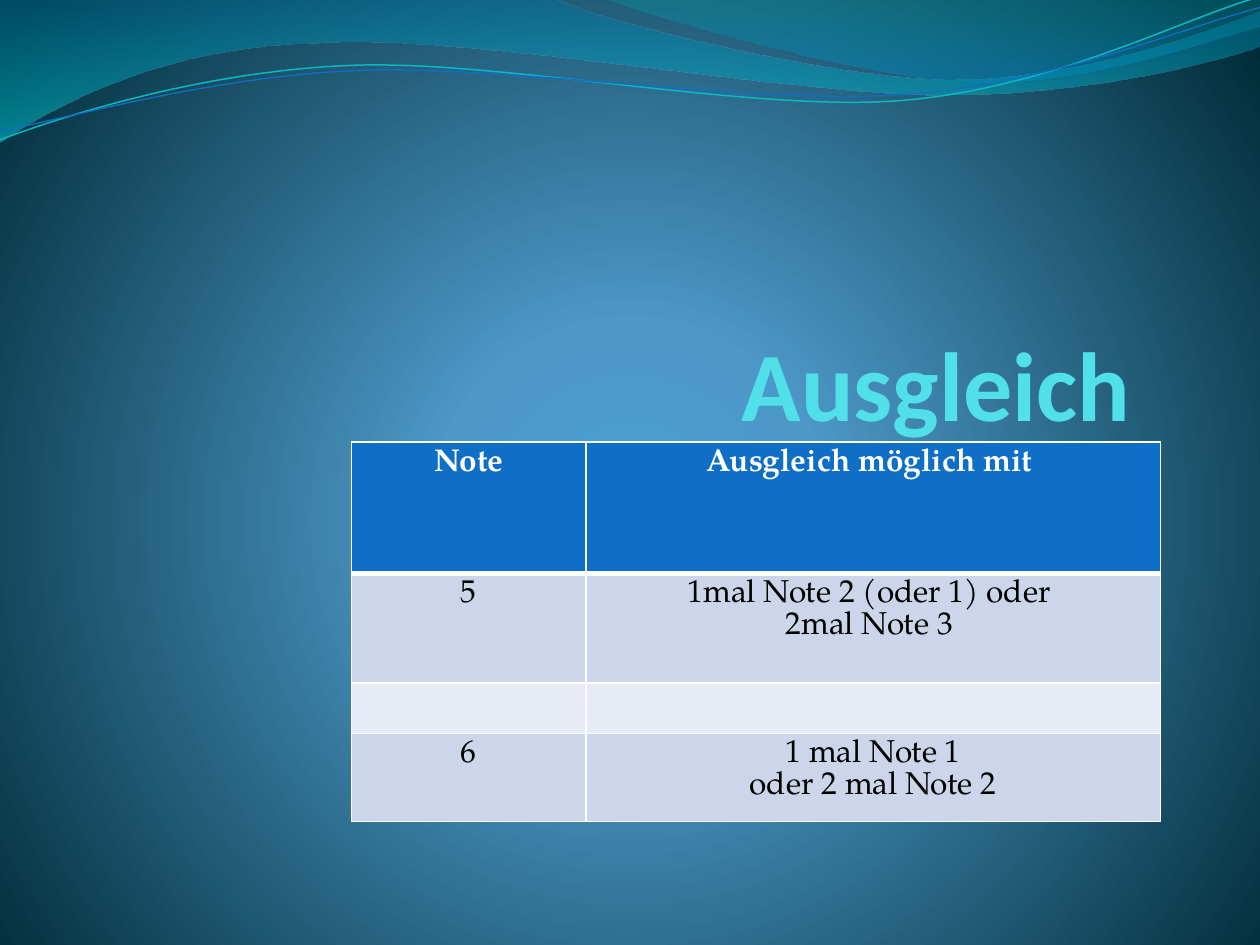
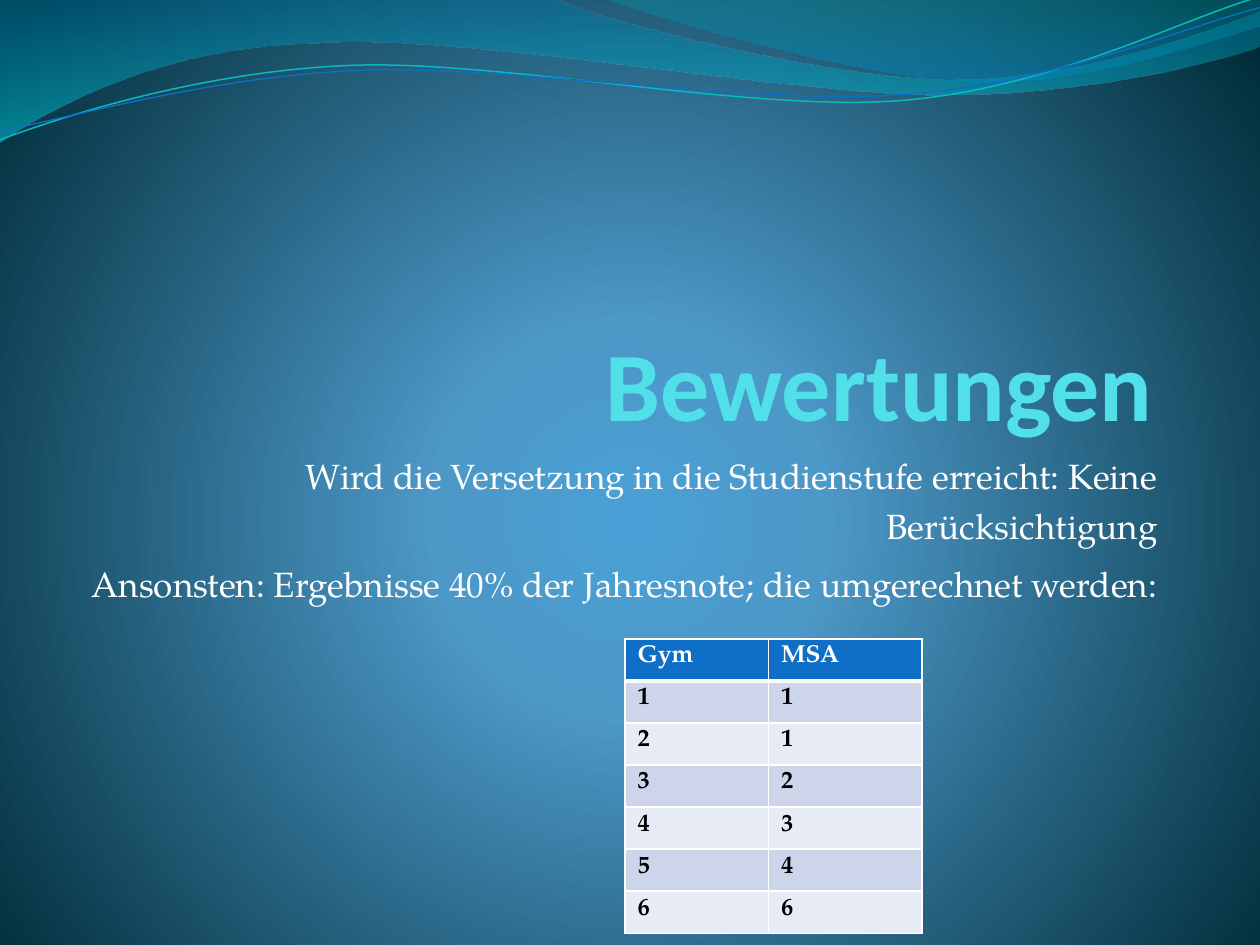
from lxml import etree
from pptx import Presentation
from pptx.dml.color import RGBColor
from pptx.enum import text as t
from pptx.oxml import ns
from pptx.util import Inches, Pt

WHITE = RGBColor(0xFF, 0xFF, 0xFF)
BLACK = RGBColor(0, 0, 0)
AQUA = RGBColor(0x51, 0xE0, 0xEA)
TEAL = RGBColor(0x0A, 0xB8, 0xBF)
BLUE = RGBColor(0x0F, 0x6F, 0xC6)
ODD = RGBColor(0xCC, 0xD5, 0xEA)
EVEN = RGBColor(0xE7, 0xEB, 0xF5)
HEAD, BODY = "Calibri", "TeX Gyre Pagella"
LEFT, RIGHT, MID = (t.PP_ALIGN.LEFT, t.PP_ALIGN.RIGHT, t.PP_ALIGN.CENTER)

# Gradient stops: position, colour, opacity in percent
GLOW = [(0, "4AA0D6", 100), (25, "4C98C7", 100), (100, "002C38", 100)]
DEEP = [(0, "0074A1", 45), (100, "00C6CF", 55)]
SEA = [(0, "00A1A9", 30), (80, "008BBF", 45)]
DOWN = '<a:lin ang="5400000" scaled="0"/>'
ROUND = ('<a:path path="circle"><a:fillToRect l="10000" t="110000" '
         'r="10000" b="100000"/></a:path>')

# Wave outlines: two numbers are a straight step, six are a curve
BAND = [(0, 0), (4.4, -0.01),
        (4.76, 0.17, 6.64, 0.63, 7.58, 0.63),
        (8.53, 0.63, 9.58, 0.26, 10, 0.09), (10.01, 0.36),
        (9.83, 0.44, 8.7, 0.76, 7.46, 0.75),
        (6.22, 0.75, 3.82, 0.28, 2.57, 0.34),
        (1.29, 0.36, 0.46, 0.83, -0.01, 1.13)]
CREST = [(4.79, -0.01), (5.09, 0.11, 6.82, 0.62, 7.69, 0.65),
         (8.56, 0.69, 9.61, 0.32, 10, 0.21), (10, 0)]
UPPER = [(0, 1.11), (0.48, 0.93, 1.58, 0.57, 2.77, 0.52),
         (3.95, 0.47, 5.93, 0.89, 7.13, 0.8),
         (8.33, 0.71, 9.38, 0.15, 9.98, -0.02)]
LOWER = [(0, 1.04), (0.47, 0.96, 1.64, 0.61, 2.83, 0.56),
         (4.03, 0.51, 5.97, 0.84, 7.17, 0.75),
         (8.36, 0.67, 9.41, 0.21, 10, 0.06)]


def blend(fill, node, stops, way):
    """Give a fill the listed stops; node is the parent of its XML."""
    fill.gradient()
    old = next(node.iter(ns.qn("a:gradFill")))
    marks = "".join(
        f'<a:gs pos="{pos * 1000}"><a:srgbClr val="{tone}">'
        f'<a:alpha val="{solid * 1000}"/></a:srgbClr></a:gs>'
        for pos, tone, solid in stops)
    new = etree.fromstring(
        f'<a:gradFill {ns.nsdecls("a")} rotWithShape="1">'
        f'<a:gsLst>{marks}</a:gsLst>{way}</a:gradFill>')
    for kid in list(old):
        old.remove(kid)
    old.extend(list(new))


def wave(slide, steps, shut):
    """Freeform whose six-number steps become cubic curves."""
    dots = [(Inches(step[i]), Inches(step[i + 1]))
            for step in steps for i in range(0, len(step), 2)]
    pen = slide.shapes.build_freeform(*dots[0])
    pen.add_line_segments(dots[1:], close=shut)
    shape = pen.convert_to_shape()
    shape.shadow.inherit = False
    lines = iter(list(shape.element.iter(ns.qn("a:lnTo"))))
    for step in steps[1:]:
        first = next(lines)
        if len(step) == 6:
            first.tag = ns.qn("a:cubicBezTo")
            for line in (next(lines), next(lines)):
                first.append(line[0])
                line.getparent().remove(line)
    return shape


def dress(master, slide):
    """Put the background and the waves on the master."""
    blend(master.background.fill, master.element.cSld, GLOW, ROUND)
    made = []
    for steps, stops in ((BAND, DEEP), (CREST, SEA)):
        shape = wave(slide, steps, True)
        blend(shape.fill, shape.element.spPr, stops, DOWN)
        shape.line.fill.background()
        made.append(shape)
    for steps, tone, width in ((UPPER, TEAL, 0.85), (LOWER, BLUE, 0.75)):
        shape = wave(slide, steps, False)
        shape.fill.background()
        shape.line.color.rgb = tone
        shape.line.width = Pt(width)
        made.append(shape)
    for shape in made:
        master.shapes.element.append(shape.element)


def style(frame, font, size, tone, bold, align, space=None, before=None):
    for para in frame.paragraphs:
        para.alignment = align
        para.line_spacing = space
        para.space_before = before
        for run in para.runs:
            run.font.name = font
            run.font.size = Pt(size)
            run.font.bold = bold
            run.font.color.rgb = tone
        if not para.runs:
            para._p.append(etree.fromstring(
                f'<a:endParaRPr {ns.nsdecls("a")} sz="{size * 100}">'
                f'<a:latin typeface="{font}"/></a:endParaRPr>'))


def textbox(slide, words, box, pads, anchor):
    frame = slide.shapes.add_textbox(*map(Inches, box)).text_frame
    frame.word_wrap = True
    frame.vertical_anchor = anchor
    left, right, high = map(Inches, pads)
    frame.margin_left, frame.margin_right = left, right
    frame.margin_top = frame.margin_bottom = high
    frame.text = words
    return frame


def title(slide, words):
    frame = textbox(slide, words, (0.58, 1.5, 8.59, 2), (0, 0.02, 0),
                    t.MSO_ANCHOR.BOTTOM)
    style(frame, HEAD, 56, AQUA, True, RIGHT)


def edge(cell, side, width):
    props = cell._tc.get_or_add_tcPr()
    line = etree.fromstring(
        f'<a:{side} {ns.nsdecls("a")} w="{Pt(width)}"><a:solidFill>'
        f'<a:srgbClr val="{WHITE}"/></a:solidFill></a:{side}>')
    props.append(line)


def grid(slide, spot, cols, rows, data, size, bold, align):
    """Table with a blue header and banded rows."""
    box = (*spot, sum(cols), sum(rows))
    table = slide.shapes.add_table(len(rows), len(cols), *map(Inches, box)).table
    for col, width in zip(table.columns, cols):
        col.width = Inches(width)
    for r, (row, high) in enumerate(zip(table.rows, rows)):
        row.height = Inches(high)
        top = r == 0
        for cell, words in zip(row.cells, data[r]):
            cell.text = words
            style(cell.text_frame, BODY, size, WHITE if top else BLACK,
                  top or bold, align)
            for side in ("lnL", "lnR") + (("lnT",) if top else ()):
                edge(cell, side, 1)
            edge(cell, "lnB", 3 if top else 1)
            cell.fill.solid()
            cell.fill.fore_color.rgb = BLUE if top else ODD if r % 2 else EVEN


def main():
    prs = Presentation()
    prs.slide_width, prs.slide_height = Inches(10), Inches(7.5)
    blank = prs.slide_layouts[6]

    # Slide 1: which marks make up for a poor one
    slide = prs.slides.add_slide(blank)
    dress(prs.slide_master, slide)
    title(slide, "Ausgleich ")
    swaps = [("Note", "Ausgleich möglich mit "),
             ("5", "1mal Note 2 (oder 1) oder \n2mal Note 3 "),
             ("", ""),
             ("6", "1 mal Note 1\noder 2 mal Note 2")]
    grid(slide, (2.79, 3.51), (1.86, 4.56), (1.04, 0.87, 0.36, 0.64),
         swaps, 18, False, MID)

    # Slide 2: conversion of marks
    slide = prs.slides.add_slide(blank)
    title(slide, "Bewertungen")
    frame = textbox(
        slide,
        "Wird die Versetzung in die Studienstufe erreicht: Keine Berücksichtigung\n"
        "Ansonsten: Ergebnisse 40% der Jahresnote; die umgerechnet werden: ",
        (0.67, 3.49, 8.59, 1.92), (0.03, 0.07, 0.05), t.MSO_ANCHOR.TOP)
    style(frame, BODY, 20, WHITE, False, RIGHT, 1.2, Pt(4))
    marks = [("Gym", "MSA"), *zip("123456", "112346")]
    grid(slide, (4.96, 5.07), (1.14, 1.22), (0.29, *[0.3] * 5, 0.29),
         marks, 14, True, LEFT)

    prs.save("out.pptx")


if __name__ == "__main__":
    main()
